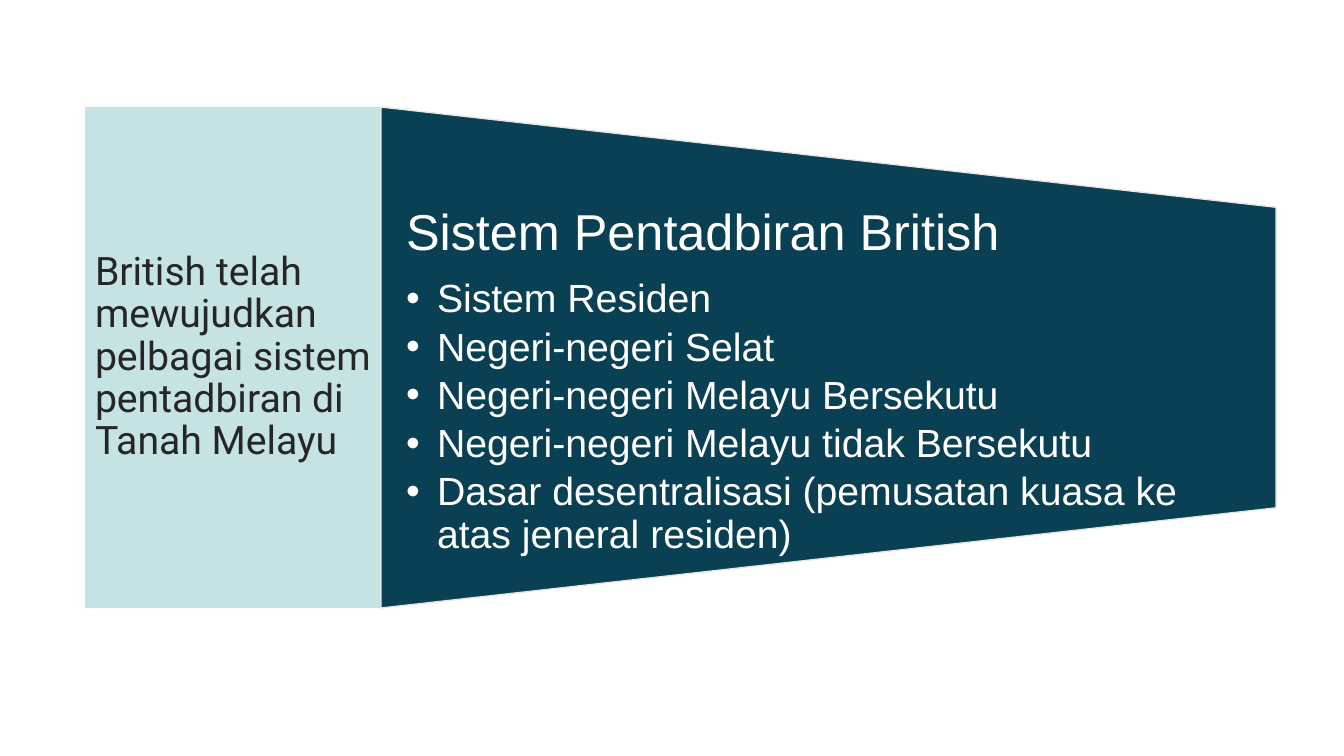
import pptx
import pptx.util
import pptx.dml.color
import pptx.enum.shapes
import pptx.enum.text
import pptx.oxml
import pptx.oxml.ns

RGB = pptx.dml.color.RGBColor
PALE = RGB(0xC5, 0xE3, 0xE3)
TEAL = RGB(0x0A, 0x40, 0x54)
EDGE = RGB(0xE7, 0xE6, 0xE6)
INK = RGB(0x26, 0x26, 0x26)
WHITE = RGB(0xFF, 0xFF, 0xFF)

SCALE = 914400 / 100.8  # EMU in one px


def px(size):
    return round(size * SCALE)


class Deck:
    def __init__(self, wide, high):
        self.prs = pptx.Presentation()
        self.prs.slide_width, self.prs.slide_height = px(wide), px(high)
        self.slide = self.prs.slides.add_slide(self.prs.slide_layouts[1])

    def place(self, shape, left, top, wide, high):
        shape.left, shape.top = px(left), px(top)
        shape.width, shape.height = px(wide), px(high)

    def frame(self, shape, anchor, side, edge):
        frame = shape.text_frame
        frame.word_wrap = True
        frame.auto_size = pptx.enum.text.MSO_AUTO_SIZE.NONE
        frame.vertical_anchor = anchor
        frame.margin_left = frame.margin_right = px(side)
        frame.margin_top = frame.margin_bottom = px(edge)
        return frame

    def style(self, para, font, size, color, after=0):
        para.alignment = pptx.enum.text.PP_ALIGN.LEFT
        para.line_spacing = 0.9
        para.space_before = pptx.util.Pt(0)
        para.space_after = pptx.util.Pt(after)
        para.font.name = font
        para.font.size = pptx.util.Pt(size)
        para.font.color.rgb = color

    def bullet(self, para, indent, mark=None):
        props = para._p.get_or_add_pPr()
        props.set("marL", str(px(indent)))
        props.set("indent", str(-px(indent)))
        names = pptx.oxml.ns.nsdecls("a")
        tag = f'<a:buChar {names} char="{mark}"/>' if mark else f"<a:buNone {names}/>"
        props.append(pptx.oxml.parse_xml(tag))

    def title(self, text, box):
        shape = self.slide.shapes.title
        self.place(shape, *box)
        shape.fill.solid()
        shape.fill.fore_color.rgb = PALE
        frame = self.frame(shape, pptx.enum.text.MSO_ANCHOR.MIDDLE, 10, 5)
        frame.text = text
        self.style(frame.paragraphs[0], "Roboto", 28, INK)

    def funnel(self, box):
        # The preset is drawn upright about the same centre, then turned
        left, top, wide, high = box
        shape = self.slide.shapes.add_shape(
            pptx.enum.shapes.MSO_SHAPE.FLOWCHART_MANUAL_OPERATION, 0, 0, 0, 0)
        self.place(shape, left + (wide - high) / 2, top + (high - wide) / 2, high, wide)
        shape.rotation = 270
        shape.shadow.inherit = False
        shape.fill.solid()
        shape.fill.fore_color.rgb = TEAL
        shape.line.color.rgb = EDGE
        shape.line.width = pptx.util.Pt(1)
        # Keep it behind the list
        self.slide.shapes.title._element.addnext(shape._element)

    def body(self, head, items, box):
        shape = self.slide.placeholders[1]
        self.place(shape, *box)
        frame = self.frame(shape, pptx.enum.text.MSO_ANCHOR.TOP, 25, 0)
        para = frame.paragraphs[0]
        para.text = head
        self.bullet(para, 0)
        self.style(para, "Arial", 36, WHITE, 12.6)
        for item in items:
            para = frame.add_paragraph()
            para.text = item
            para.level = 1
            self.bullet(para, 31, "•")
            self.style(para, "Arial", 28, WHITE, 4.2)


def main():
    deck = Deck(1344, 756)

    # Left panel
    deck.title("British telah mewujudkan pelbagai sistem pentadbiran di Tanah Melayu",
               (85, 107, 296, 501))

    # Tapered panel with the list
    deck.funnel((381, 107, 895, 501))
    deck.body("Sistem Pentadbiran British", [
        "Sistem Residen",
        "Negeri-negeri Selat",
        "Negeri-negeri Melayu Bersekutu",
        "Negeri-negeri Melayu tidak Bersekutu",
        "Dasar desentralisasi (pemusatan kuasa ke atas jeneral residen)",
    ], (381, 207, 895, 300))

    deck.prs.save("out.pptx")


if __name__ == "__main__":
    main()
